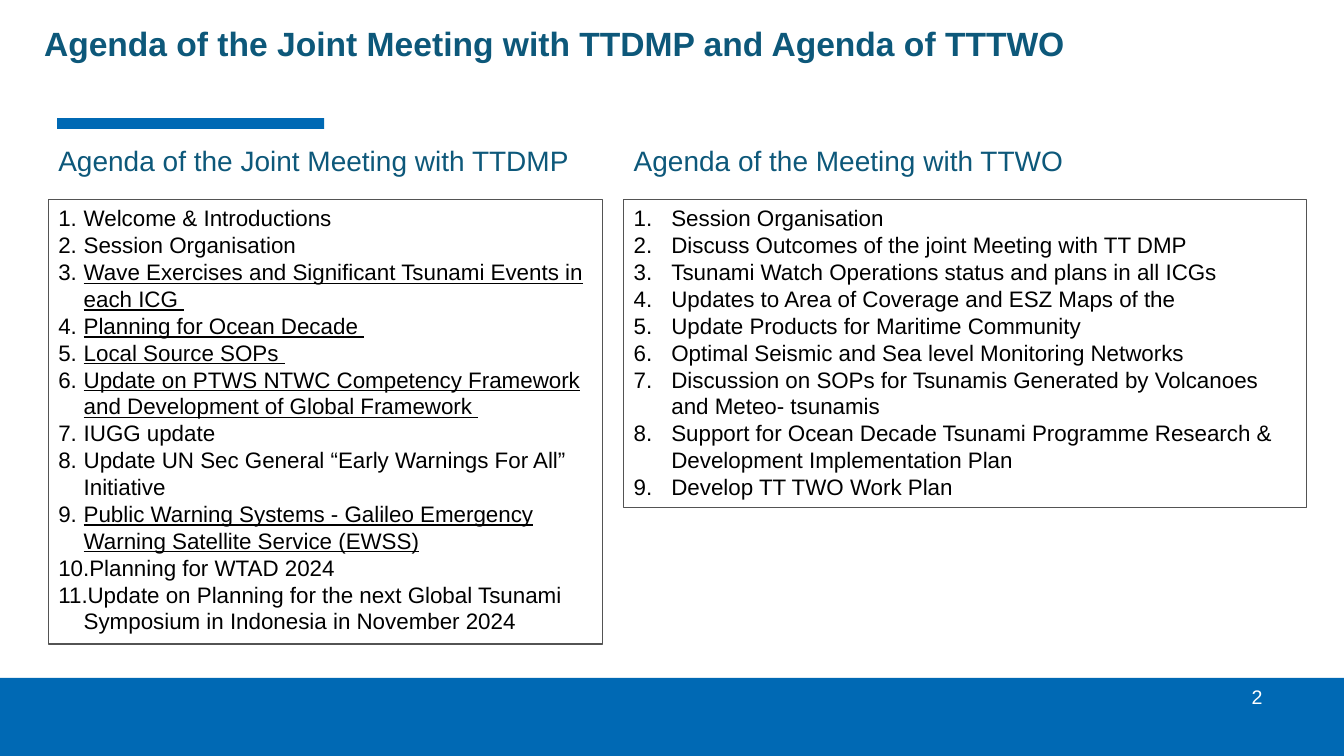
from lxml import etree
from pptx import Presentation
from pptx.dml.color import RGBColor
from pptx.enum import shapes, text
from pptx.oxml.ns import qn
from pptx.util import Cm, Pt

HUES = {"blue": "0069B4", "teal": "0D587A", "edge": "535353",
        "black": "000000", "white": "FFFFFF"}
WIDE, HIGH = 33.87, 19.05

TITLE = {"size": Pt(24), "bold": True}
HEAD = {"size": Pt(20)}
ITEM = {"size": Pt(16)}
PAGE = {"size": Pt(14)}

# Each item: wording, underlined or not
JOINT = [
    ("Welcome & Introductions", False),
    ("Session Organisation", False),
    ("Wave Exercises and Significant Tsunami Events in each ICG ", True),
    ("Planning for Ocean Decade ", True),
    ("Local Source SOPs ", True),
    ("Update on PTWS NTWC Competency Framework and Development of "
     "Global Framework ", True),
    ("IUGG update", False),
    ("Update UN Sec General “Early Warnings For All” Initiative", False),
    ("Public Warning Systems - Galileo Emergency Warning Satellite "
     "Service (EWSS)", True),
    ("Planning for WTAD 2024", False),
    ("Update on Planning for the next Global Tsunami Symposium in "
     "Indonesia in November 2024", False),
]
WATCH = [(line, False) for line in (
    "Session Organisation",
    "Discuss Outcomes of the joint Meeting with TT DMP",
    "Tsunami Watch Operations status and plans in all ICGs",
    "Updates to Area of Coverage and ESZ Maps of the",
    "Update Products for Maritime Community",
    "Optimal Seismic and Sea level Monitoring Networks",
    "Discussion on SOPs for Tsunamis Generated by Volcanoes and "
    "Meteo- tsunamis",
    "Support for Ocean Decade Tsunami Programme Research & "
    "Development Implementation Plan",
    "Develop TT TWO Work Plan",
)]


def tint(name):
    return RGBColor.from_string(HUES[name])


def style(font, hue, form):
    for key, value in form.items():
        setattr(font, key, value)
    font.name = "Arial"
    font.color.rgb = tint(hue)


def add_rect(slide, *place):
    rect = slide.shapes.add_shape(shapes.MSO_SHAPE.RECTANGLE,
                                  *map(Cm, place))
    rect.shadow.inherit = False
    return rect


def add_bar(slide, *place):
    bar = add_rect(slide, *place)
    bar.fill.solid()
    bar.fill.fore_color.rgb = tint("blue")
    bar.line.fill.background()


def add_label(slide, words, hue, form, *place):
    frame = slide.shapes.add_textbox(*map(Cm, place)).text_frame
    frame.word_wrap = True
    para = frame.paragraphs[0]
    para.text = words
    style(para.runs[0].font, hue, form)


def number(para, indent):
    """Give the paragraph an automatic number with a hanging indent."""
    props = para._p.get_or_add_pPr()
    props.set("marL", str(Cm(indent)))
    props.set("indent", str(-Cm(indent)))
    face = etree.SubElement(props, qn("a:buFont"))
    face.set("typeface", "+mj-lt")
    count = etree.SubElement(props, qn("a:buAutoNum"))
    count.set("type", "arabicPeriod")


def add_list(slide, items, indent, *place):
    box = add_rect(slide, *place)
    box.fill.background()
    box.line.color.rgb = tint("edge")
    box.line.width = Pt(0.75)
    frame = box.text_frame
    frame.word_wrap = True
    frame.vertical_anchor = text.MSO_ANCHOR.TOP
    for i, (words, under) in enumerate(items):
        para = frame.add_paragraph() if i else frame.paragraphs[0]
        para.alignment = text.PP_ALIGN.LEFT
        number(para, indent)
        run = para.add_run()
        run.text = words
        style(run.font, "black", {**ITEM, "underline": under})


def main():
    deck = Presentation()
    deck.slide_width, deck.slide_height = Cm(WIDE), Cm(HIGH)
    slide = deck.slides.add_slide(deck.slide_layouts[6])

    add_bar(slide, 1.44, 2.98, 6.73, 0.27)
    add_bar(slide, 0, 17.08, WIDE, HIGH - 17.08)
    add_label(slide, "Agenda of the Joint Meeting with TTDMP and "
              "Agenda of TTTWO", "teal", TITLE, 0.86, 0.46, 29.1, 1.28)

    columns = [
        ("Agenda of the Joint Meeting with TTDMP", JOINT,
         0.64, 1.22, 13.97, 11.2),
        ("Agenda of the Meeting with TTWO", WATCH,
         0.95, 15.72, 17.2, 7.77),
    ]
    for head, items, indent, left, width, height in columns:
        add_label(slide, head, "teal", HEAD, left, 3.5, width, 1.11)
        add_list(slide, items, indent, left, 5.03, width, height)

    add_label(slide, "2", "white", PAGE, 31.29, 17.14, 2.3, 1.27)
    deck.save("out.pptx")


if __name__ == "__main__":
    main()
